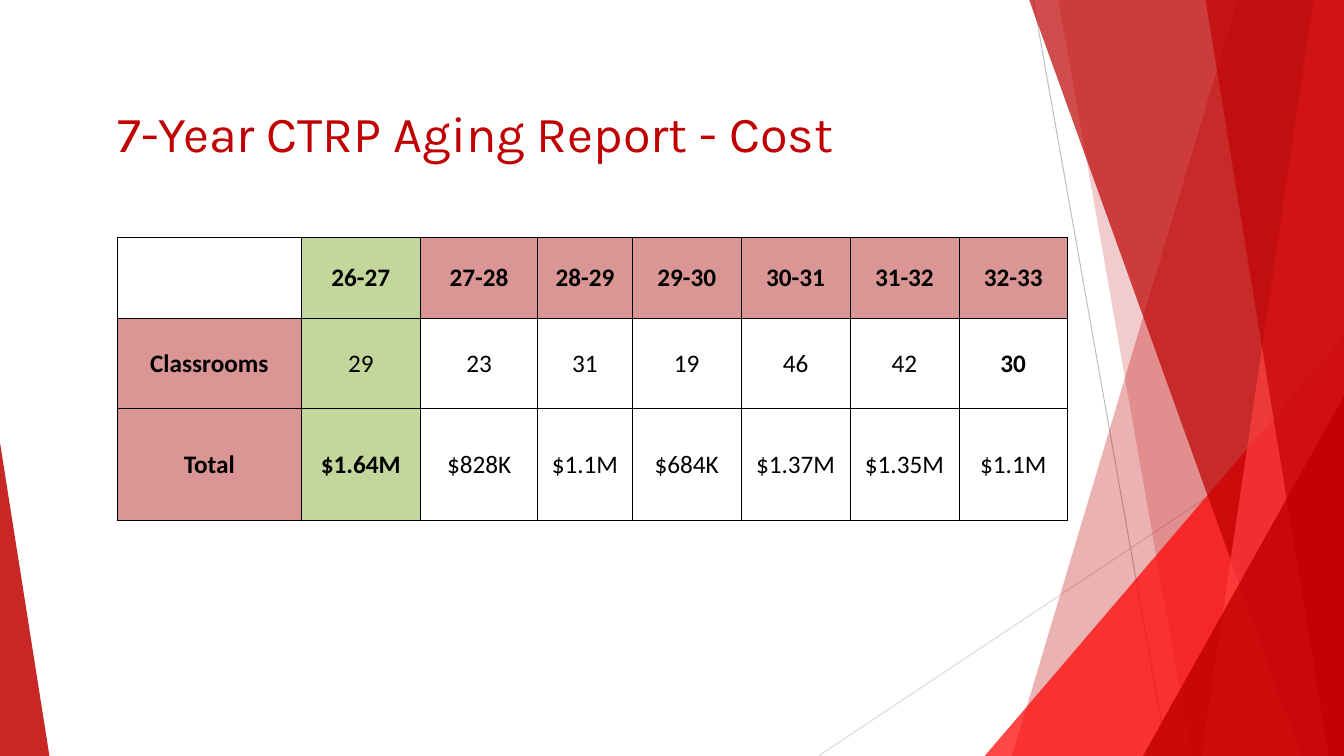
from dataclasses import dataclass

from lxml import etree
from pptx import Presentation
from pptx import util as u
from pptx.dml.color import RGBColor
from pptx.enum import shapes, text
from pptx.oxml.ns import qn


@dataclass(frozen=True)
class Theme:
    crimson: str = "C00000"
    dark_red: str = "BE0000"
    red: str = "FF0000"
    coral: str = "FF4040"
    rose: str = "D99694"
    green: str = "C3D69B"
    black: str = "000000"
    gray: str = "BEBEBE"
    light_gray: str = "D9D9D9"
    title_font: str = "Karla"
    body_font: str = "Calibri"
    title_size: float = 36
    body_size: float = 18
    hairline: float = 0.72
    border: float = 0.5


class SlideBuilder:
    """Draws on one slide; lengths are percentages of its width and height."""

    def __init__(self, deck, theme):
        self.deck, self.theme = deck, theme
        self.page = deck.slides.add_slide(deck.slide_layouts[5])

    def x(self, share):
        return round(self.deck.slide_width * share / 100)

    def y(self, share):
        return round(self.deck.slide_height * share / 100)

    def line(self, start, end, color):
        (x1, y1), (x2, y2) = start, end
        line = self.page.shapes.add_connector(
            shapes.MSO_CONNECTOR.STRAIGHT,
            self.x(x1), self.y(y1), self.x(x2), self.y(y2))
        line.line.color.rgb = RGBColor.from_string(color)
        line.line.width = u.Pt(self.theme.hairline)
        etree.SubElement(line.element.spPr, qn("a:effectLst"))

    def polygon(self, points, color, opacity):
        corners = [(self.x(px), self.y(py)) for px, py in points]
        builder = self.page.shapes.build_freeform(*corners[0])
        builder.add_line_segments(corners[1:], close=True)
        shape = builder.convert_to_shape()
        shape.shadow.inherit = False
        shape.fill.solid()
        shape.fill.fore_color.rgb = RGBColor.from_string(color)
        shape.line.fill.background()
        fill_color = shape.element.spPr.find(f"{qn('a:solidFill')}/{qn('a:srgbClr')}")
        etree.SubElement(fill_color, qn("a:alpha"), val=str(opacity * 1000))

    def span(self, para, words, font, size, color, bold=False):
        span = para.add_run()
        span.text = words
        span.font.name, span.font.size, span.font.bold = font, u.Pt(size), bold
        span.font.color.rgb = RGBColor.from_string(color)

    def title(self, words, left, top, width, height):
        box = self.page.shapes.title
        box.left, box.top = self.x(left), self.y(top)
        box.width, box.height = self.x(width), self.y(height)
        frame = box.text_frame
        frame.margin_left = frame.margin_right = frame.margin_top = frame.margin_bottom = 0
        frame.vertical_anchor = text.MSO_ANCHOR.MIDDLE
        frame.auto_size = text.MSO_AUTO_SIZE.SHAPE_TO_FIT_TEXT
        para = frame.paragraphs[0]
        para.alignment = text.PP_ALIGN.LEFT
        self.span(para, words, self.theme.title_font, self.theme.title_size,
                  self.theme.crimson)
        self.page.shapes.element.append(box.element)  # in front of the wedges

    def table(self, rows, left, top, widths, heights, fill_for, bold_for):
        table = self.page.shapes.add_table(
            len(heights), len(widths), self.x(left), self.y(top),
            self.x(sum(widths)), self.y(sum(heights))).table
        table.first_row = table.horz_banding = False
        for column, width in zip(table.columns, widths):
            column.width = self.x(width)
        for row, height in zip(table.rows, heights):
            row.height = self.y(height)
        for r, row in enumerate(rows):
            for c, words in enumerate(row):
                self.cell(table.cell(r, c), words, fill_for(r, c), bold_for(r, c))

    def cell(self, cell, words, fill, bold):
        cell.margin_left = cell.margin_right = cell.margin_top = u.Inches(0.01)
        cell.margin_bottom = 0
        cell.vertical_anchor = text.MSO_ANCHOR.MIDDLE
        properties = cell._tc.get_or_add_tcPr()
        for side in ("lnL", "lnR", "lnT", "lnB"):
            edge = etree.SubElement(properties, qn(f"a:{side}"),
                                    w=str(u.Pt(self.theme.border)))
            paint = etree.SubElement(edge, qn("a:solidFill"))
            etree.SubElement(paint, qn("a:srgbClr"), val=self.theme.black)
        if fill:
            cell.fill.solid()
            cell.fill.fore_color.rgb = RGBColor.from_string(fill)
        else:
            cell.fill.background()
        if words:
            para = cell.text_frame.paragraphs[0]
            para.alignment = text.PP_ALIGN.CENTER
            self.span(para, words, self.theme.body_font, self.theme.body_size,
                      self.theme.black, bold)


def draw_backdrop(slide, theme):
    slide.line((76.88, 0), (86.86, 100), theme.gray)
    slide.line((100, 53.73), (60.9, 100), theme.light_gray)

    def band(top_x, bottom_x, color, opacity):
        slide.polygon([(100, 0), (top_x, 0), (bottom_x, 100), (100, 100)], color, opacity)

    def corner(edge_y, bottom_x, color, opacity):
        slide.polygon([(100, edge_y), (bottom_x, 100), (100, 100)], color, opacity)

    # Overlapping wedges on the right, back to front
    band(92.1, 75.3, theme.crimson, 30)
    band(78.75, 88.65, theme.crimson, 20)
    corner(44.4, 73.27, theme.red, 72)
    band(76.58, 96.83, theme.dark_red, 70)
    band(97.73, 89.4, theme.coral, 70)
    band(89.7, 98.85, theme.crimson, 65)
    corner(52.4, 85.05, theme.crimson, 80)

    # Wedge on the left
    slide.polygon([(0, 58.53), (0, 100), (3.68, 100)], theme.crimson, 85)


def draw_cost_table(slide, theme):
    rows = [
        ["", "26-27", "27-28", "28-29", "29-30", "30-31", "31-32", "32-33"],
        ["Classrooms", "29", "23", "31", "19", "46", "42", "30"],
        ["Total", "$1.64M", "$828K", "$1.1M", "$684K", "$1.37M", "$1.35M", "$1.1M"],
    ]
    emphasized = {(1, 7), (2, 1)}

    def is_header(r, c):
        return r == 0 or c == 0

    def fill_for(r, c):
        if c == 1:
            return theme.green
        return theme.rose if is_header(r, c) and rows[r][c] else None

    def bold_for(r, c):
        return is_header(r, c) or (r, c) in emphasized

    slide.table(rows, 8.75, 31.33, [13.65, 8.9, 8.7, 7.05] + [8.1] * 4,
                [10.8, 11.87, 14.8], fill_for, bold_for)


def main():
    deck = Presentation()
    deck.slide_width, deck.slide_height = u.Inches(13.33), u.Inches(7.5)
    theme = Theme()
    slide = SlideBuilder(deck, theme)
    draw_backdrop(slide, theme)
    slide.title("7-Year CTRP Aging Report - Cost", 8.75, 13.33, 61.28, 8.4)
    draw_cost_table(slide, theme)
    deck.save("out.pptx")


if __name__ == "__main__":
    main()
